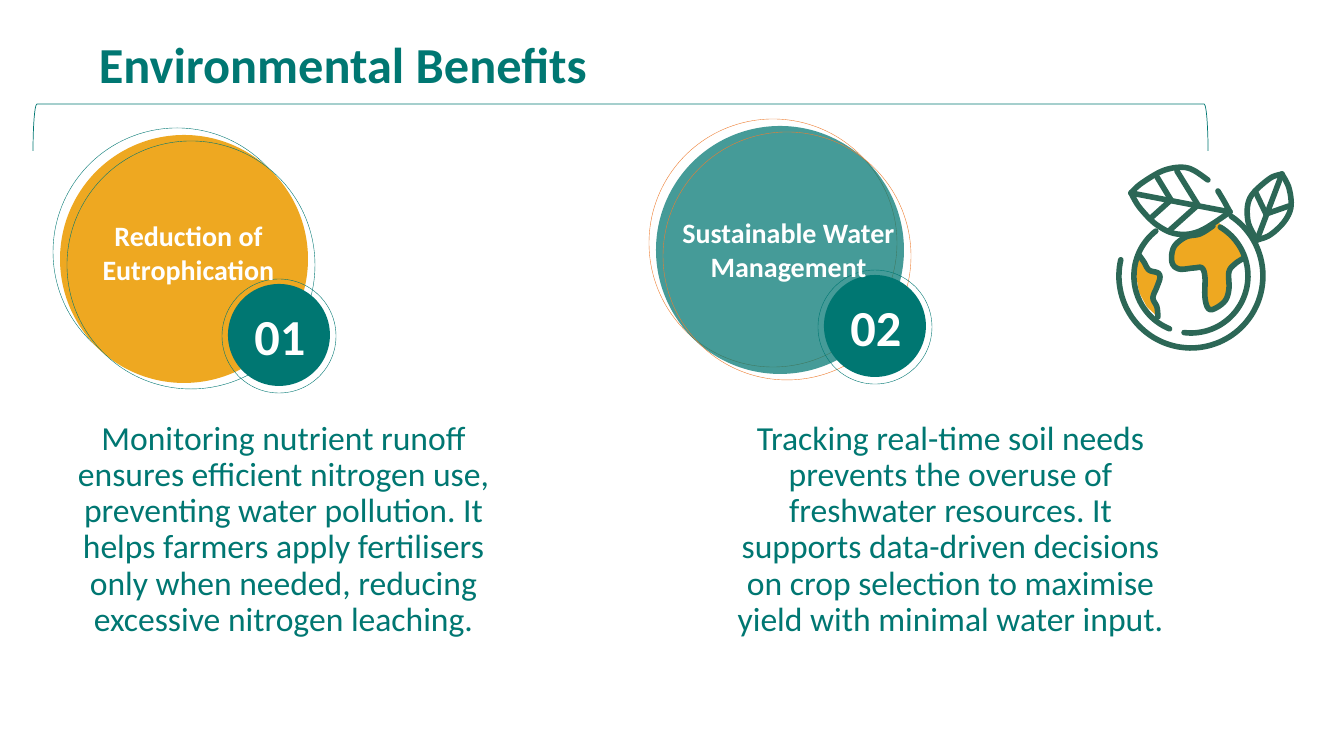
"""Build the Environmental Benefits slide with two topics and a green globe icon."""
from math import cos, radians, sin

from lxml.etree import SubElement
from pptx import Presentation
from pptx.dml.color import RGBColor
from pptx.enum.shapes import MSO_SHAPE
from pptx.enum.text import MSO_ANCHOR, MSO_AUTO_SIZE, PP_ALIGN
from pptx.oxml.ns import qn
from pptx.util import Emu, Pt

PX = 914400 / 100.8
FINE = 100
FONT = "Calibri"
COLORS = {"teal": "007772", "amber": "EEA821", "orange": "ED7D31",
          "white": "FFFFFF", "leaf": "2C6756"}

HEADING = "Environmental Benefits"
HEADING_BOX = (75, 35, 536, 111)
TOPICS = [
    {"number": "01", "label": "Reduction of Eutrophication",
     "detail": "Monitoring nutrient runoff ensures efficient nitrogen use, preventing "
               "water pollution. It helps farmers apply fertilisers only when needed, "
               "reducing excessive nitrogen leaching.",
     "corner": (53, 128), "label_at": (60, 214), "detail_box": (44, 416, 479, 306),
     "disc": "amber", "opacity": 100, "halo": "teal"},
    {"number": "02", "label": "Sustainable Water Management",
     "detail": "Tracking real-time soil needs prevents the overuse of freshwater "
               "resources. It supports data-driven decisions on crop selection to "
               "maximise yield with minimal water input.",
     "corner": (649, 119), "label_at": (660, 211), "detail_box": (721, 416, 459, 248),
     "disc": "teal", "opacity": 73, "halo": "orange"},
]

GLOBE_CENTER = (1191, 276)
GLOBE_ARCS = [(72, -56, 193), (57, -59, 97), (57, 112, 233)]
LANDS = [
    {"coast": [(1139, 255), (1144, 262), (1149, 270), (1158, 273), (1160, 278), (1157, 287),
               (1153, 298), (1157, 307), (1158, 317)],
     "edge": [(1147, 307), (1139, 292), (1136, 274)]},
    {"coast": [(1213, 226), (1200, 234), (1186, 237), (1174, 247), (1172, 262), (1179, 269),
               (1194, 268), (1202, 268), (1205, 277), (1205, 297), (1208, 308), (1214, 309),
               (1225, 301), (1229, 289), (1229, 272), (1235, 264), (1244, 258)],
     "edge": [(1241, 246), (1232, 233), (1219, 223)]},
]
LEAF_STROKES = [
    [(1208, 180), (1188, 168), (1165, 170), (1142, 183), (1131, 193)],
    [(1131, 193), (1140, 208), (1157, 225), (1177, 234), (1200, 231), (1230, 212)],
    [(1230, 212), (1224, 201), (1218, 191)],
    [(1131, 193), (1230, 212)],
    [(1157, 177), (1171, 200), (1152, 217)],
    [(1177, 171), (1198, 205), (1170, 230)],
    [(1282, 174), (1269, 179), (1250, 198), (1248, 221), (1257, 240)],
    [(1282, 174), (1289, 188), (1291, 207), (1284, 222), (1270, 235), (1257, 240)],
    [(1282, 174), (1257, 240)],
    [(1255, 191), (1266, 214), (1289, 206)],
]


def emu(*lengths):
    return [Emu(round(length * PX)) for length in lengths]


def color(name):
    return RGBColor.from_string(COLORS[name])


def paint(shape, fill=None, line=None, width=0.28):
    shape.shadow.inherit = False
    if fill:
        shape.fill.solid()
        shape.fill.fore_color.rgb = color(fill)
    else:
        shape.fill.background()
    if line:
        shape.line.color.rgb = color(line)
        shape.line.width = Pt(width)
    else:
        shape.line.fill.background()
    return shape


def add_circle(slide, left, top, size, fill=None, line=None):
    circle = slide.shapes.add_shape(MSO_SHAPE.OVAL, *emu(left, top, size, size))
    return paint(circle, fill, line)


def write(shape, words, size, ink, bold=False, spacing=None):
    frame = shape.text_frame
    frame.text = words
    frame.word_wrap = True
    frame.auto_size = MSO_AUTO_SIZE.NONE
    frame.vertical_anchor = MSO_ANCHOR.TOP
    paragraph = frame.paragraphs[0]
    paragraph.alignment = PP_ALIGN.CENTER
    paragraph.space_before = Pt(0)
    if spacing:
        paragraph.line_spacing = spacing
    font = paragraph.runs[0].font
    font.name, font.size, font.bold = FONT, Pt(size), bold
    font.color.rgb = color(ink)


def place(placeholder, box):
    placeholder.left, placeholder.top, placeholder.width, placeholder.height = emu(*box)


def remove_bullet(paragraph):
    properties = paragraph._p.get_or_add_pPr()
    properties.set("marL", "0")
    properties.set("indent", "0")
    SubElement(properties, qn("a:buNone"))


def smooth(points, steps=8):
    padded = [points[0], *points, points[-1]]
    curve = []
    for a, b, c, d in zip(padded, padded[1:], padded[2:], padded[3:]):
        for step in range(steps):
            t = step / steps
            curve.append(tuple(
                q + t / 2 * (r - p + t * (2 * p - 5 * q + 4 * r - s + t * (3 * (q - r) + s - p)))
                for p, q, r, s in zip(a, b, c, d)))
    return curve + [points[-1]]


def arc(radius, start, end):
    x, y = GLOBE_CENTER
    return [(x + radius * cos(radians(angle)), y + radius * sin(radians(angle)))
            for angle in range(start, end + 1, 3)]


def add_outline(slide, points, closed=False):
    fine_points = [(x * FINE, y * FINE) for x, y in points]
    builder = slide.shapes.build_freeform(*fine_points[0], scale=PX / FINE)
    builder.add_line_segments(fine_points[1:], close=closed)
    return builder.convert_to_shape()


def add_stroke(slide, points):
    stroke = paint(add_outline(slide, points), line="leaf", width=4)
    stroke.line._get_or_add_ln().set("cap", "rnd")


def add_topic_circles(slide, topic):
    x, y = topic["corner"]
    add_circle(slide, x, y, 248, line=topic["halo"])
    disc = add_circle(slide, x + 7, y + 7, 248, fill=topic["disc"])
    if topic["opacity"] < 100:
        disc_color = disc._element.spPr.find(qn("a:solidFill"))[0]
        SubElement(disc_color, qn("a:alpha")).set("val", str(topic["opacity"] * 1000))
    add_circle(slide, x + 14, y + 13, 248, line=topic["halo"])
    add_circle(slide, x + 175, y + 156, 102, fill="teal")
    add_circle(slide, x + 169, y + 151, 114, line="teal")


def add_topic_text(slide, topic, detail):
    x, y = topic["corner"]
    label = slide.shapes.add_textbox(*emu(*topic["label_at"], 257, 78))
    write(label, topic["label"], 20, "white", bold=True)
    number = slide.shapes.add_textbox(*emu(x + 184, y + 172, 86, 72))
    write(number, topic["number"], 36, "white", bold=True)
    place(detail, topic["detail_box"])
    write(detail, topic["detail"], 24, "teal", spacing=0.9)
    remove_bullet(detail.text_frame.paragraphs[0])


def add_globe(slide):
    coasts = [smooth(land["coast"]) for land in LANDS]
    for coast, land in zip(coasts, LANDS):
        paint(add_outline(slide, coast + land["edge"], closed=True), fill="amber")
    arcs = [arc(*sweep) for sweep in GLOBE_ARCS]
    leaves = [smooth(points) if len(points) > 3 else points for points in LEAF_STROKES]
    for points in coasts + arcs + leaves:
        add_stroke(slide, points)


def main():
    deck = Presentation()
    deck.slide_width, deck.slide_height = emu(1344, 756)
    slide = deck.slides.add_slide(deck.slide_layouts[3])
    heading, *details = slide.placeholders
    place(heading, HEADING_BOX)
    write(heading, HEADING, 36, "teal", bold=True, spacing=0.9)
    for topic, detail in zip(TOPICS, details):
        add_topic_circles(slide, topic)
        add_topic_text(slide, topic, detail)
    bracket = slide.shapes.add_shape(MSO_SHAPE.LEFT_BRACKET, *emu(597, -460, 47, 1175))
    bracket.rotation = 90
    paint(bracket, line="teal", width=0.5)
    add_globe(slide)
    deck.save("out.pptx")


if __name__ == "__main__":
    main()
